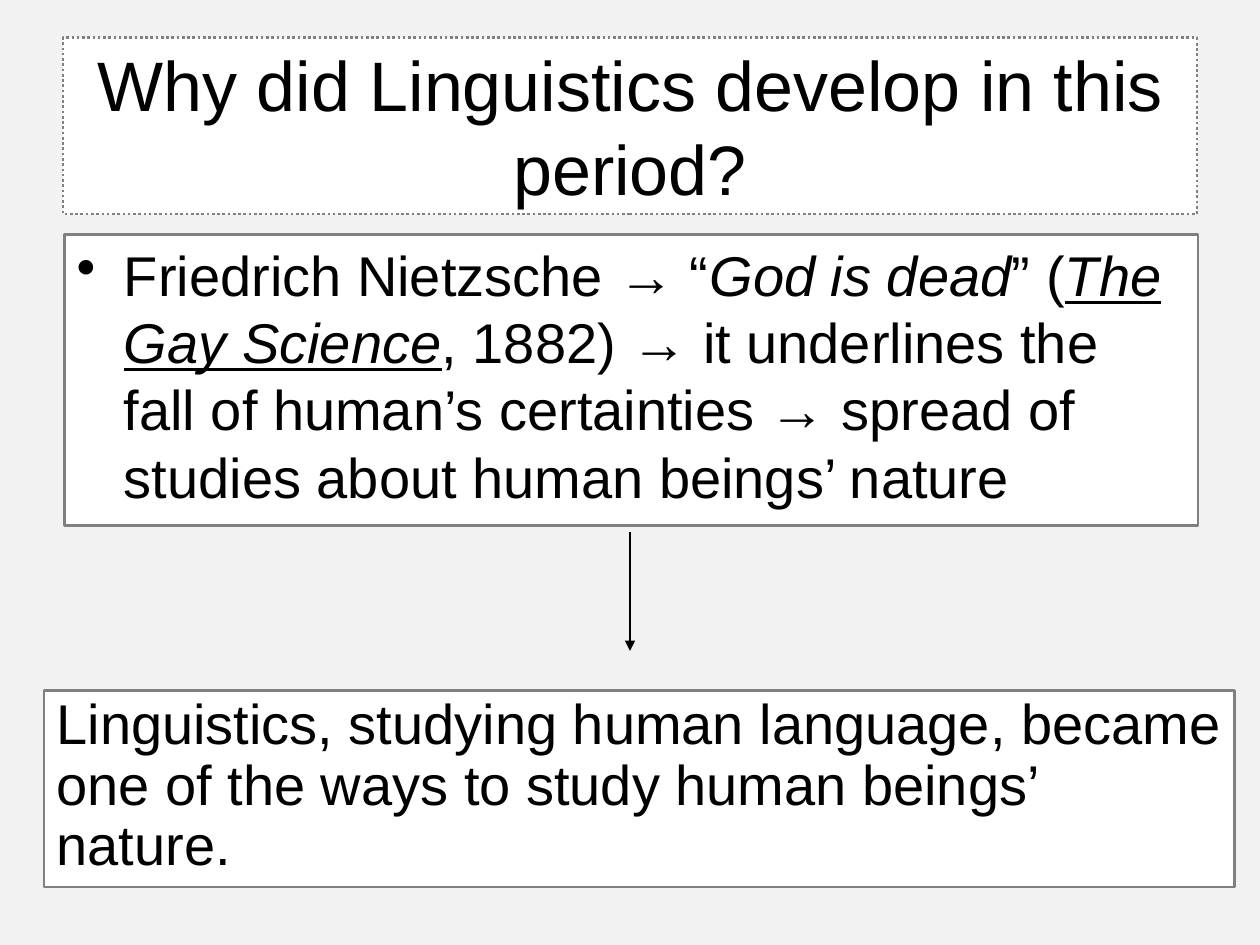
from pptx import Presentation
from pptx.dml.color import RGBColor
from pptx.enum.dml import MSO_LINE_DASH_STYLE as Dash
from pptx.enum.shapes import MSO_CONNECTOR as Connector, MSO_SHAPE as Shape
from pptx.enum.text import MSO_ANCHOR as Anchor, PP_ALIGN as Align
from pptx.oxml.xmlchemy import OxmlElement
from pptx.util import Pt

BACKGROUND = RGBColor(0xF2, 0xF2, 0xF2)
WHITE = RGBColor(0xFF, 0xFF, 0xFF)
GREY = RGBColor(0x80, 0x80, 0x80)
BLACK = RGBColor(0, 0, 0)

ITALIC = {"italic": True}
BOOK_TITLE = {"italic": True, "underline": True}


def add_panel(page, bounds, size, spans, para_format, anchor=Anchor.TOP):
    box = page.shapes.add_shape(Shape.RECTANGLE, *map(Pt, bounds))
    box.shadow.inherit = False
    box.fill.solid()
    box.fill.fore_color.rgb = WHITE
    box.line.color.rgb = GREY
    box.line.width = Pt(1.5)
    frame = box.text_frame
    frame.word_wrap = True
    frame.vertical_anchor = anchor
    para = frame.paragraphs[0]
    for name, value in para_format.items():
        setattr(para, name, value)
    for text, span_format in spans:
        span = para.add_run()
        span.text = text
        span.font.color.rgb = BLACK
        for name, value in {"name": "Arial", "size": Pt(size), **span_format}.items():
            setattr(span.font, name, value)
    return box


deck = Presentation()
deck.slide_width, deck.slide_height = Pt(720), Pt(540)
page = deck.slides.add_slide(deck.slide_layouts[6])
page.background.fill.solid()
page.background.fill.fore_color.rgb = BACKGROUND

title = add_panel(
    page, (36, 21.6, 648, 100.8), 40,
    [("Why did Linguistics develop in this period?", {})],
    {"alignment": Align.CENTER}, Anchor.MIDDLE)
title.line.dash_style = Dash.ROUND_DOT

reason = add_panel(
    page, (36.7, 133.9, 648, 166.3), 32,
    [("Friedrich Nietzsche → “", {}),
     ("God is dead", ITALIC),
     ("” (", {}),
     ("The Gay Science", BOOK_TITLE),
     (", 1882) → it underlines the fall of human’s certainties → "
      "spread of studies about human beings’ nature", {})],
    {"alignment": Align.LEFT, "space_before": Pt(6.4)})
props = reason.text_frame.paragraphs[0]._p.get_or_add_pPr()
props.set("marL", str(Pt(27)))
props.set("indent", str(Pt(-27)))
bullet = OxmlElement("a:buChar")
bullet.set("char", "•")
props.append(bullet)

arrow = page.shapes.add_connector(Connector.STRAIGHT, Pt(360), Pt(304), Pt(360), Pt(372))
arrow.line.color.rgb = BLACK
arrow.line.width = Pt(0.75)
head = OxmlElement("a:tailEnd")
head.set("type", "triangle")
arrow.line._get_or_add_ln().append(head)
arrow._element.spPr.append(OxmlElement("a:effectLst"))

add_panel(
    page, (25.2, 394.4, 680.4, 112.5), 32,
    [("Linguistics, studying human language, became one of the ways "
      "to study human beings’ nature.", {})],
    {"alignment": Align.LEFT, "line_spacing": 0.9, "space_before": Pt(6.4)})

deck.save("out.pptx")
